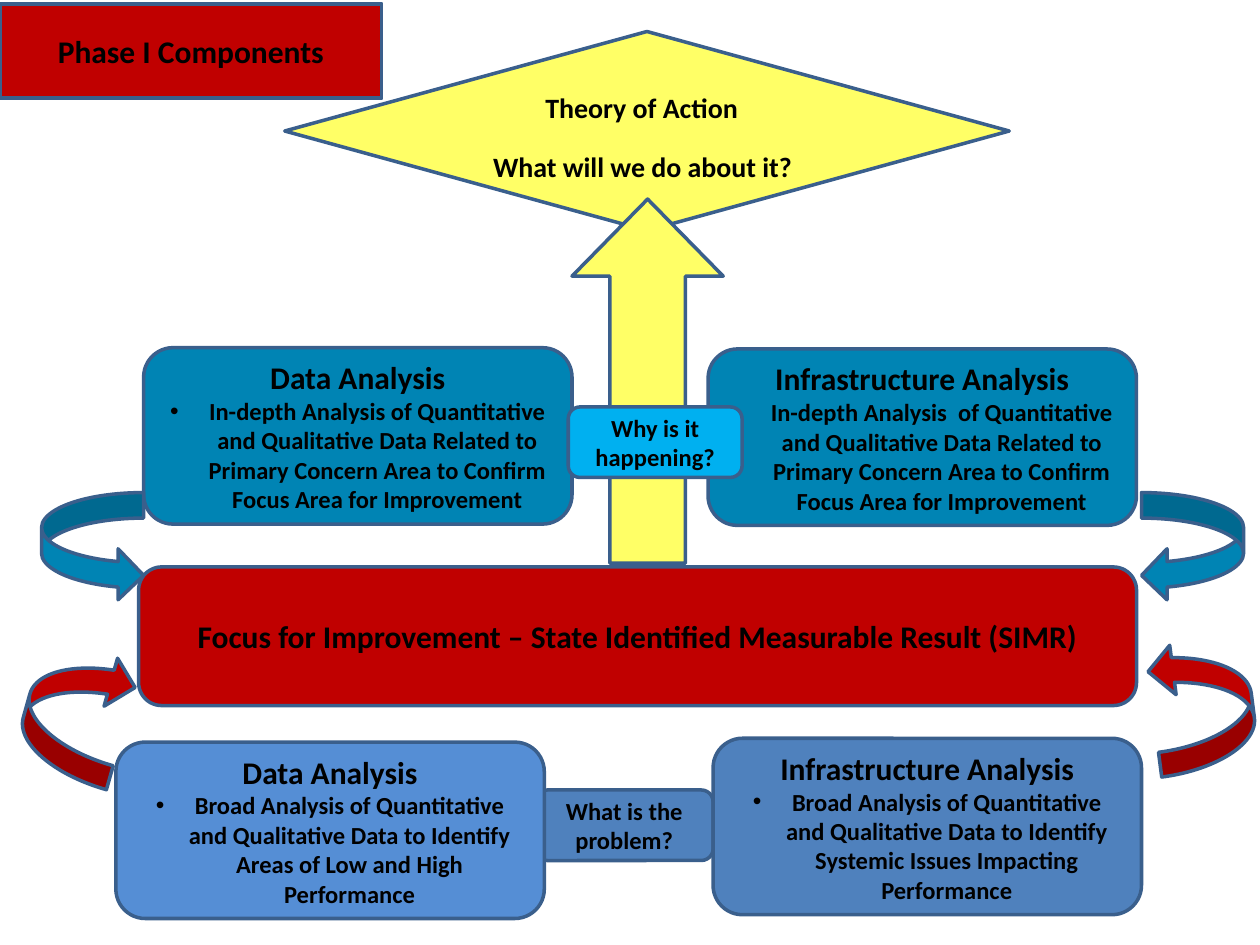
from lxml import etree
from pptx import Presentation
from pptx import util as u
from pptx.dml.color import RGBColor
from pptx.enum import shapes, text
from pptx.oxml.ns import qn

RED = RGBColor(0xC0, 0x00, 0x00)
YELLOW = RGBColor(0xFF, 0xFF, 0x66)
TEAL = RGBColor(0x00, 0x84, 0xB4)
SKY = RGBColor(0x00, 0xB0, 0xF0)
STEEL = RGBColor(0x4F, 0x81, 0xBD)
CORNFLOWER = RGBColor(0x55, 0x8E, 0xD5)
OUTLINE = RGBColor(0x3A, 0x5F, 0x8C)
BLACK = RGBColor(0x00, 0x00, 0x00)

KIND = shapes.MSO_SHAPE
COLUMNS, ROWS = 100, 75
ANALYSIS_SIZE = (34, 14)
QUESTION_HEIGHT = 5.6
HEADING, LABEL, DETAIL = 18, 16, 14


class Diagram:
    """Holds the slide, its 100 by 75 grid and the shared style."""

    font_name = "Calibri"
    line_width = u.Pt(2)
    bullet_indent = u.Inches(0.31)

    def __init__(self, deck):
        layout = deck.slide_layouts.get_by_name("Title Only")
        self.slide = deck.slides.add_slide(layout)
        self.column = deck.slide_width / COLUMNS
        self.row = deck.slide_height / ROWS

    def place(self, shape, at):
        units = (self.column, self.row) * 2
        for side, cells, unit in zip(("left", "top", "width", "height"), at, units):
            setattr(shape, side, round(cells * unit))

    def paint(self, shape, fill, outlined=True):
        shape.fill.solid()
        shape.fill.fore_color.rgb = fill
        if outlined:
            shape.line.color.rgb = OUTLINE
            shape.line.width = self.line_width
        else:
            shape.line.fill.background()

    def add_text(self, shape, paragraphs, align=text.PP_ALIGN.CENTER,
                 anchor=text.MSO_ANCHOR.MIDDLE):
        """Fill a shape with (words, size, bulleted) paragraphs."""
        frame = shape.text_frame
        frame.word_wrap = True
        frame.auto_size = text.MSO_AUTO_SIZE.NONE
        frame.vertical_anchor = anchor
        for number, (words, size, bulleted) in enumerate(paragraphs):
            paragraph = frame.add_paragraph() if number else frame.paragraphs[0]
            paragraph.alignment = align
            run = paragraph.add_run()
            run.text = words
            style = {"name": self.font_name, "size": u.Pt(size), "bold": True}
            for key, value in style.items():
                setattr(run.font, key, value)
            run.font.color.rgb = BLACK
            if bulleted:
                self.add_bullet(paragraph)

    def add_bullet(self, paragraph):
        properties = paragraph._p.get_or_add_pPr()
        properties.set("marL", str(self.bullet_indent))
        properties.set("indent", str(-self.bullet_indent))
        etree.SubElement(properties, qn("a:buFont")).set("typeface", "Arial")
        etree.SubElement(properties, qn("a:buChar")).set("char", "•")

    def title(self, words, at, fill):
        """Turn the title placeholder into a rounded box."""
        heading = self.slide.shapes.title
        self.place(heading, at)
        geometry = etree.SubElement(heading._element.spPr, qn("a:prstGeom"))
        geometry.set("prst", "roundRect")
        etree.SubElement(geometry, qn("a:avLst"))
        self.paint(heading, fill)
        self.add_text(heading, [(words, HEADING, False)])

    def shape(self, kind, at, fill, rotation=0, outlined=True):
        figure = self.slide.shapes.add_shape(kind, 0, 0, 0, 0)
        self.place(figure, at)
        figure.rotation = rotation
        figure.shadow.inherit = False
        self.paint(figure, fill, outlined)
        return figure

    def box(self, words, at, fill, size):
        self.add_text(self.shape(KIND.ROUNDED_RECTANGLE, at, fill),
                      [(words, size, False)])

    def analysis(self, subject, detail, corner, fill):
        panel = self.shape(KIND.ROUNDED_RECTANGLE, corner + ANALYSIS_SIZE, fill)
        self.add_text(panel, [(f"{subject} Analysis", HEADING, False),
                              (detail, DETAIL, True)])

    def caption(self, words, kind, at, fill, **layout):
        self.add_text(self.shape(kind, at, fill, outlined=False),
                      [(words, LABEL, False)], **layout)


def main():
    deck = Presentation()
    deck.slide_width, deck.slide_height = u.Inches(10), u.Inches(7.5)
    diagram = Diagram(deck)

    diagram.title("Phase I Components", (0, 0.3, 30.3, 7.5), RED)
    diagram.box("Focus for Improvement – State Identified Measurable Result (SIMR)",
                (11, 45, 79.2, 11), RED, HEADING)
    diagram.shape(KIND.FLOWCHART_DECISION, (22.6, 2.5, 57.5, 15.8), YELLOW)
    rising_arrow = diagram.shape(KIND.UP_ARROW, (45.4, 15.8, 12, 28.9), YELLOW)
    rising_arrow.adjustments[1] = 0.51

    in_depth = ("In-depth Analysis {}of Quantitative and Qualitative Data Related to "
                "Primary Concern Area to Confirm Focus Area for Improvement")
    broad = "Broad Analysis of Quantitative and Qualitative Data to Identify "
    diagram.analysis("Data", in_depth.format(""), (11.4, 27.6), TEAL)
    diagram.analysis("Infrastructure", in_depth.format(" "), (56.2, 27.7), TEAL)

    for kind, at, fill, rotation in (
        (KIND.CURVED_RIGHT_ARROW, (3.3, 39.1, 8.1, 8.6), TEAL, 0),
        (KIND.CURVED_LEFT_ARROW, (90.6, 39.1, 8.1, 8.6), TEAL, 0),
        (KIND.CURVED_RIGHT_ARROW, (91.5, 50.8, 7.9, 10.4), RED, 172.6),
        (KIND.CURVED_LEFT_ARROW, (2.1, 51.4, 7.9, 10.4), RED, 195.7),
    ):
        diagram.shape(kind, at, fill, rotation)

    diagram.box("What is the problem?", (42.5, 62.7, 14.1, QUESTION_HEIGHT),
                STEEL, DETAIL)
    diagram.analysis("Data", broad + "Areas of Low and High Performance",
                     (9.2, 58.9), CORNFLOWER)
    diagram.analysis("Infrastructure", broad + "Systemic Issues Impacting Performance",
                     (56.6, 58.6), STEEL)
    diagram.box("Why is it happening?", (45.1, 32.3, 13.8, QUESTION_HEIGHT),
                SKY, DETAIL)

    diagram.caption("Theory of Action", KIND.RECTANGLE, (42.3, 6.7, 20, 3.7), YELLOW,
                    align=text.PP_ALIGN.LEFT, anchor=text.MSO_ANCHOR.TOP)
    diagram.caption("What will we do about it?", KIND.ROUNDED_RECTANGLE,
                    (36.9, 12.3, 28.2, 1.8), YELLOW)
    deck.save("out.pptx")


if __name__ == "__main__":
    main()
